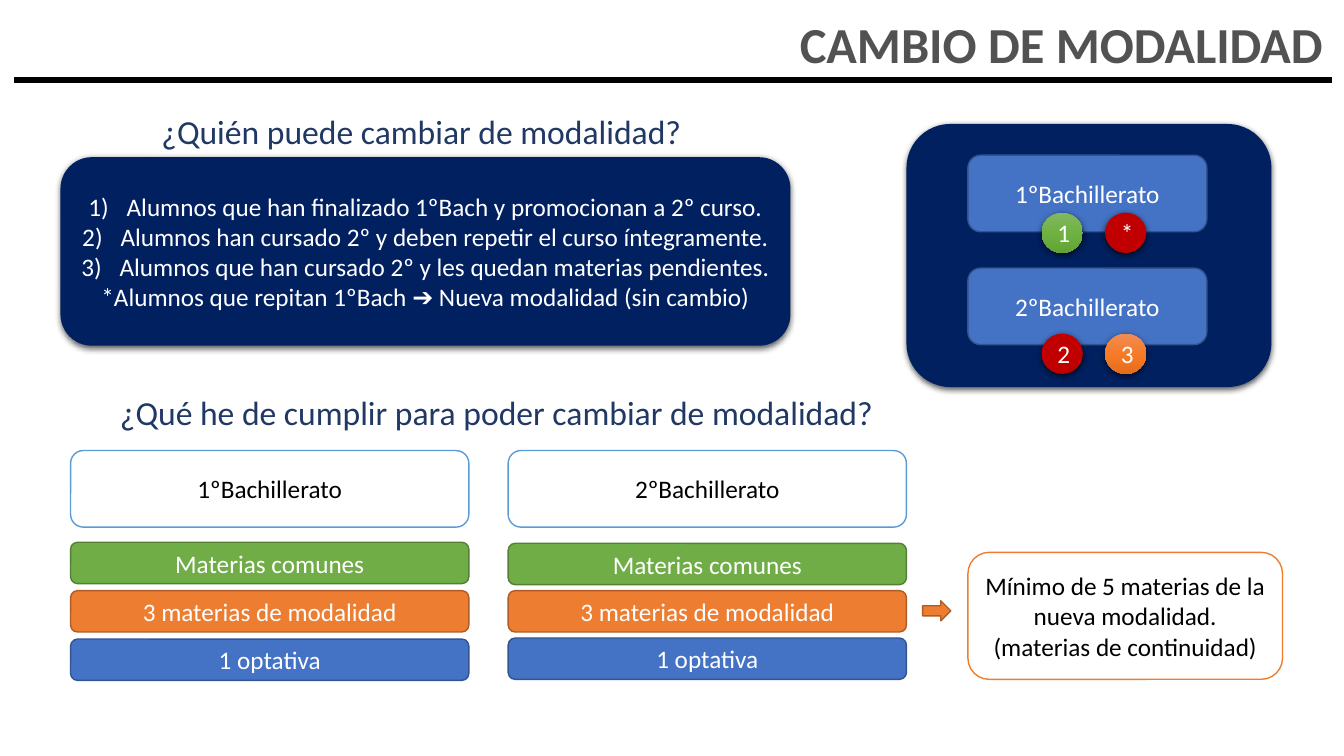
from lxml.etree import SubElement
from pptx import Presentation
from pptx.dml.color import RGBColor
from pptx.enum.shapes import MSO_CONNECTOR, MSO_SHAPE
from pptx.enum.text import MSO_ANCHOR, PP_ALIGN
from pptx.oxml.ns import qn
from pptx.util import Inches, Pt

NAVY = RGBColor(0x00, 0x20, 0x60)
HEADING = RGBColor(0x20, 0x38, 0x64)
GREY = RGBColor(0x52, 0x52, 0x52)
BLACK = RGBColor(0x00, 0x00, 0x00)
WHITE = RGBColor(0xFF, 0xFF, 0xFF)
BLUE = RGBColor(0x44, 0x72, 0xC4)
DARK_BLUE = RGBColor(0x32, 0x54, 0x91)
LIGHT_BLUE = RGBColor(0x5B, 0x9B, 0xD5)
GREEN = RGBColor(0x70, 0xAD, 0x47)
DARK_GREEN = RGBColor(0x53, 0x80, 0x35)
ORANGE = RGBColor(0xED, 0x7D, 0x31)
DARK_ORANGE = RGBColor(0xAF, 0x5C, 0x24)
RED = RGBColor(0xC0, 0x00, 0x00)
GREEN_SHADES = [RGBColor(0x81, 0xB8, 0x61), RGBColor(0x6F, 0xB2, 0x42), RGBColor(0x62, 0xA3, 0x36)]
ORANGE_SHADES = [RGBColor(0xF1, 0x8C, 0x57), RGBColor(0xF6, 0x7B, 0x28), RGBColor(0xE5, 0x6C, 0x19)]

FONT = "Calibri"


def write(shape, lines, size, color, align=PP_ALIGN.CENTER, bold=False):
    frame = shape.text_frame
    frame.word_wrap = True
    for index, line in enumerate(lines):
        para = frame.paragraphs[0] if index == 0 else frame.add_paragraph()
        para.text = line
        para.alignment = align
        para.font.name = FONT
        para.font.size = Pt(size)
        para.font.bold = bold
        para.font.color.rgb = color


def add_box(page, box, fill, border=None, lines=(), color=WHITE, kind=MSO_SHAPE.ROUNDED_RECTANGLE):
    shape = page.shapes.add_shape(kind, *map(Inches, box))
    shape.shadow.inherit = False
    shape.fill.solid()
    shape.fill.fore_color.rgb = fill
    if border is None:
        shape.line.fill.background()
    else:
        shape.line.color.rgb = border
        shape.line.width = Pt(1)
    shape.text_frame.vertical_anchor = MSO_ANCHOR.MIDDLE
    write(shape, lines, 18, color)
    return shape


def add_shadow(shape):
    effects = shape._element.spPr.find(qn("a:effectLst"))
    shadow = SubElement(effects, qn("a:outerShdw"), blurRad=str(Pt(4.5)), dist=str(Pt(1.5)),
                        dir="5400000", algn="ctr", rotWithShape="0")
    tint = SubElement(shadow, qn("a:srgbClr"), val="000000")
    SubElement(tint, qn("a:alpha"), val="63000")


def add_shades(shape, shades):
    shape.fill.gradient()
    shape.fill.gradient_angle = 270
    stops = shape._element.spPr.find(qn("a:gradFill")).find(qn("a:gsLst"))
    for stop in list(stops):
        stops.remove(stop)
    for index, shade in enumerate(shades):
        stop = SubElement(stops, qn("a:gs"), pos=str(index * 50000))
        SubElement(stop, qn("a:srgbClr"), val=str(shade))


def add_number(para):
    properties = para._p.get_or_add_pPr()
    properties.set("marL", str(Inches(0.38)))
    properties.set("indent", str(-Inches(0.38)))
    SubElement(properties, qn("a:buFont"), typeface="+mj-lt")
    SubElement(properties, qn("a:buAutoNum"), type="arabicParenR")


def add_heading(page, box, text):
    heading = page.shapes.add_textbox(*map(Inches, box))
    write(heading, [text], 24, HEADING)


def add_title(page, box):
    left, top, width, height = box
    # Rule under the title
    y = Inches(top + 0.64)
    rule = page.shapes.add_connector(MSO_CONNECTOR.STRAIGHT, Inches(0.14), y, Inches(left + width - 0.01), y)
    rule.line.color.rgb = BLACK
    rule.line.width = Pt(4.25)
    SubElement(rule._element.spPr, qn("a:effectLst"))
    # Title text
    title = page.shapes.add_textbox(*map(Inches, box))
    write(title, ["CAMBIO DE MODALIDAD"], 36, GREY, PP_ALIGN.RIGHT, True)
    title.text_frame.paragraphs[0].line_spacing = 0.9


def add_who(page, box):
    left, top, width, height = box
    add_heading(page, (left + 0.85, top, 5.46, 0.5), "¿Quién puede cambiar de modalidad?")
    panel = add_box(page, (left, top + 0.51, width, height - 0.51), NAVY, lines=[
        "Alumnos que han finalizado 1ºBach y promocionan a 2º curso.",
        "Alumnos han cursado 2º y deben repetir el curso íntegramente.",
        "Alumnos que han cursado 2º y les quedan materias pendientes.",
        "*Alumnos que repitan 1ºBach ➔ Nueva modalidad (sin cambio)",
    ])
    add_shadow(panel)
    for para in panel.text_frame.paragraphs[:3]:
        add_number(para)


def add_years(page, box):
    left, top, width, height = box
    add_shadow(add_box(page, box, NAVY))
    # Each year: name, card offset, badge offset, badges
    years = [
        ("1ºBachillerato", 0.31, 0.88, [("1", GREEN_SHADES), ("*", None)]),
        ("2ºBachillerato", 1.43, 2.08, [("2", None), ("3", ORANGE_SHADES)]),
    ]
    for name, card_offset, badge_offset, badges in years:
        add_box(page, (left + 0.61, top + card_offset, 2.37, 0.76), BLUE, DARK_BLUE, [name])
        for column, (label, shades) in enumerate(badges):
            place = (left + 1.34 + column * 0.63, top + badge_offset, 0.41, 0.4)
            badge = add_box(page, place, RED, lines=[label], kind=MSO_SHAPE.OVAL)
            if shades:
                add_shades(badge, shades)
            add_shadow(badge)


def add_requirements(page, box):
    left, top, width, height = box
    add_heading(page, (left + 0.27, top, 7.91, 0.5), "¿Qué he de cumplir para poder cambiar de modalidad?")
    # Subject columns
    subjects = [
        ("Materias comunes", GREEN, DARK_GREEN),
        ("3 materias de modalidad", ORANGE, DARK_ORANGE),
        ("1 optativa", BLUE, DARK_BLUE),
    ]
    columns = [("1ºBachillerato", 0, 1.54, 0.48), ("2ºBachillerato", 4.34, 1.55, 0.47)]
    for year, offset, first, step in columns:
        x = left + offset
        add_box(page, (x, top + 0.63, 3.95, 0.76), WHITE, LIGHT_BLUE, [year], BLACK)
        for row, (subject, fill, border) in enumerate(subjects):
            add_box(page, (x, top + first + row * step, 3.95, 0.41), fill, border, [subject])
    # Resulting minimum
    add_box(page, (left + 8.45, top + 2.12, 0.28, 0.2), ORANGE, DARK_ORANGE, kind=MSO_SHAPE.RIGHT_ARROW)
    add_box(page, (left + 8.9, top + 1.64, width - 8.9, 1.26), WHITE, ORANGE,
            ["Mínimo de 5 materias de la nueva modalidad.", "(materias de continuidad)"], BLACK)


def main():
    deck = Presentation()
    deck.slide_width = Inches(13.33)
    deck.slide_height = Inches(7.5)
    page = deck.slides.add_slide(deck.slide_layouts[6])
    add_title(page, (1.39, 0.15, 11.83, 0.76))
    add_who(page, (0.6, 1.05, 7.24, 2.38))
    add_years(page, (8.99, 1.23, 3.62, 2.61))
    add_requirements(page, (0.7, 3.84, 12.02, 2.91))
    deck.save("out.pptx")


if __name__ == "__main__":
    main()
